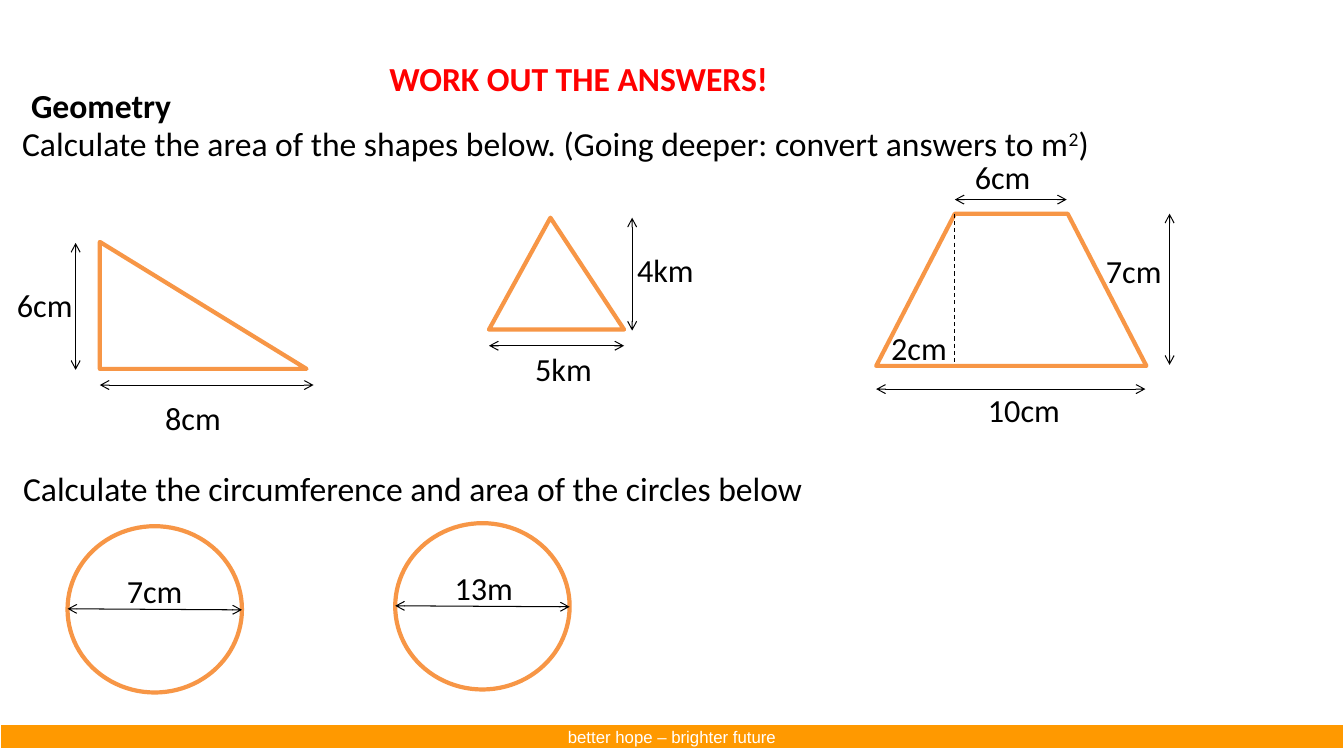
from dataclasses import dataclass

import lxml.etree
import pptx
import pptx.dml.color
import pptx.enum.dml
import pptx.enum.shapes
import pptx.enum.text
import pptx.oxml.ns
import pptx.util

Inches = pptx.util.Inches
Pt = pptx.util.Pt
RGBColor = pptx.dml.color.RGBColor
PRESET = pptx.enum.shapes.MSO_SHAPE
ALIGN = pptx.enum.text.PP_ALIGN
qn = pptx.oxml.ns.qn

BLACK = RGBColor(0x00, 0x00, 0x00)
WHITE = RGBColor(0xFF, 0xFF, 0xFF)
RED = RGBColor(0xFF, 0x00, 0x00)
OUTLINE_ORANGE = RGBColor(0xF7, 0x96, 0x46)
FOOTER_ORANGE = RGBColor(0xFF, 0x99, 0x00)


@dataclass
class Figure:
    preset: PRESET
    left: float
    top: float
    width: float
    height: float
    adjustment: float | None = None


@dataclass
class Measure:
    """A dimension line from (x1, y1) to (x2, y2)."""
    x1: float
    y1: float
    x2: float
    y2: float
    dashed: bool = False


@dataclass
class Text:
    words: str
    left: float
    top: float
    width: float
    height: float = 0.49
    size: float = 23
    bold: bool = False
    color: RGBColor = BLACK
    align: ALIGN = ALIGN.LEFT
    wrap: bool = False
    superscript: str = ""
    ending: str = ""


def draw_figure(slide, figure: Figure, fill: RGBColor = WHITE,
                line: RGBColor = OUTLINE_ORANGE, line_width: float = 3):
    shape = slide.shapes.add_shape(
        figure.preset, Inches(figure.left), Inches(figure.top),
        Inches(figure.width), Inches(figure.height))
    shape.shadow.inherit = False
    shape.fill.solid()
    shape.fill.fore_color.rgb = fill
    shape.line.color.rgb = line
    shape.line.width = Pt(line_width)
    if figure.adjustment is not None:
        shape.adjustments[0] = figure.adjustment
    return shape


def draw_measure(slide, measure: Measure) -> None:
    connector = slide.shapes.add_connector(
        pptx.enum.shapes.MSO_CONNECTOR.STRAIGHT,
        Inches(measure.x1), Inches(measure.y1),
        Inches(measure.x2), Inches(measure.y2))
    connector.line.color.rgb = BLACK
    connector.line.width = Pt(0.75)
    if measure.dashed:
        connector.line.dash_style = pptx.enum.dml.MSO_LINE.DASH
    else:
        outline = connector.line._get_or_add_ln()
        for end in ("a:headEnd", "a:tailEnd"):
            lxml.etree.SubElement(outline, qn(end), type="arrow")
    lxml.etree.SubElement(connector._element.spPr, qn("a:effectLst"))


def style(paragraph, name: str, size: float, color: RGBColor,
          align: ALIGN, bold: bool = False) -> None:
    paragraph.alignment = align
    paragraph.font.name = name
    paragraph.font.size = Pt(size)
    paragraph.font.bold = bold
    paragraph.font.color.rgb = color


def draw_text(slide, text: Text) -> None:
    box = slide.shapes.add_textbox(
        Inches(text.left), Inches(text.top), Inches(text.width), Inches(text.height))
    frame = box.text_frame
    frame.word_wrap = text.wrap
    frame.auto_size = pptx.enum.text.MSO_AUTO_SIZE.SHAPE_TO_FIT_TEXT
    paragraph = frame.paragraphs[0]
    paragraph.add_run().text = text.words
    if text.superscript:
        raised = paragraph.add_run()
        raised.text = text.superscript
        raised._r.get_or_add_rPr().set("baseline", "30000")
        paragraph.add_run().text = text.ending
    style(paragraph, "Calibri", text.size, text.color, text.align, text.bold)


def draw_circle(slide, left: float, top: float, diameter: str, label_width: float) -> None:
    width, height = 1.73, 1.65
    middle = top + 0.82
    draw_figure(slide, Figure(PRESET.OVAL, left, top, width, height))
    draw_measure(slide, Measure(left, middle, left + width, middle + 0.01))
    draw_text(slide, Text(diameter, left + 0.49, top + 0.4, label_width))


def draw_footer(slide) -> None:
    footer = draw_figure(slide, Figure(PRESET.RECTANGLE, 0, 7.18, 13.33, 0.25),
                         FOOTER_ORANGE, WHITE, 1.5)
    footer.text_frame.vertical_anchor = pptx.enum.text.MSO_ANCHOR.MIDDLE
    slogan = footer.text_frame.paragraphs[0]
    slogan.add_run().text = "better hope – brighter future"
    style(slogan, "Arial", 12, WHITE, ALIGN.CENTER)


HEADINGS = [
    Text("Geometry", 0.21, 0.79, 12.52, 0.5, 24, bold=True, wrap=True),
    Text("Calculate the area of the shapes below. (Going deeper: convert answers to m",
         0.12, 1.17, 11.89, 0.5, 24, wrap=True, superscript="2", ending=")"),
    Text("Calculate the circumference and area of the circles below",
         0.13, 4.59, 11.89, 0.5, 24, wrap=True),
    Text("WORK OUT THE ANSWERS!", 3.36, 0.53, 4.76, 0.5, 24, bold=True,
         color=RED, align=ALIGN.CENTER),
]

RIGHT_TRIANGLE = [
    Figure(PRESET.RIGHT_TRIANGLE, 0.99, 2.4, 2.05, 1.26),
    Measure(0.75, 2.41, 0.75, 3.67),
    Measure(0.99, 3.82, 3.11, 3.82),
    Text("8cm", 1.54, 3.9, 0.76),
    Text("6cm", 0.07, 2.78, 0.76),
]

TRIANGLE = [
    Figure(PRESET.ISOSCELES_TRIANGLE, 4.85, 2.16, 1.34, 1.11, 0.455),
    Measure(6.27, 2.16, 6.27, 3.28),
    Measure(4.85, 3.43, 6.19, 3.43),
    Text("5km", 5.21, 3.42, 0.77),
    Text("4km", 6.22, 2.43, 0.77),
]

TRAPEZOID = [
    Figure(PRESET.TRAPEZOID, 8.69, 2.12, 2.68, 1.51, 0.517),
    Measure(11.6, 2.12, 11.6, 3.62),
    Measure(8.69, 3.86, 11.36, 3.86),
    Measure(9.47, 1.98, 10.58, 1.98),
    Measure(9.47, 2.12, 9.47, 3.62, dashed=True),
    Text("10cm", 9.7, 3.82, 0.92),
    Text("6cm", 9.57, 1.51, 0.76),
    Text("7cm", 10.87, 2.44, 0.76),
    Text("2cm", 8.74, 3.21, 0.76),
]

DRAWERS = {Figure: draw_figure, Measure: draw_measure, Text: draw_text}


def main() -> None:
    presentation = pptx.Presentation()
    presentation.slide_width = Inches(13.33)
    presentation.slide_height = Inches(7.5)
    slide = presentation.slides.add_slide(presentation.slide_layouts[6])

    draw_footer(slide)

    # Headings and the three area exercises
    for part in HEADINGS + RIGHT_TRIANGLE + TRIANGLE + TRAPEZOID:
        DRAWERS[type(part)](slide, part)

    # Circle exercises
    draw_circle(slide, 0.67, 5.22, "7cm", 0.76)
    draw_circle(slide, 3.92, 5.19, "13m", 0.79)

    presentation.save("out.pptx")


if __name__ == "__main__":
    main()
